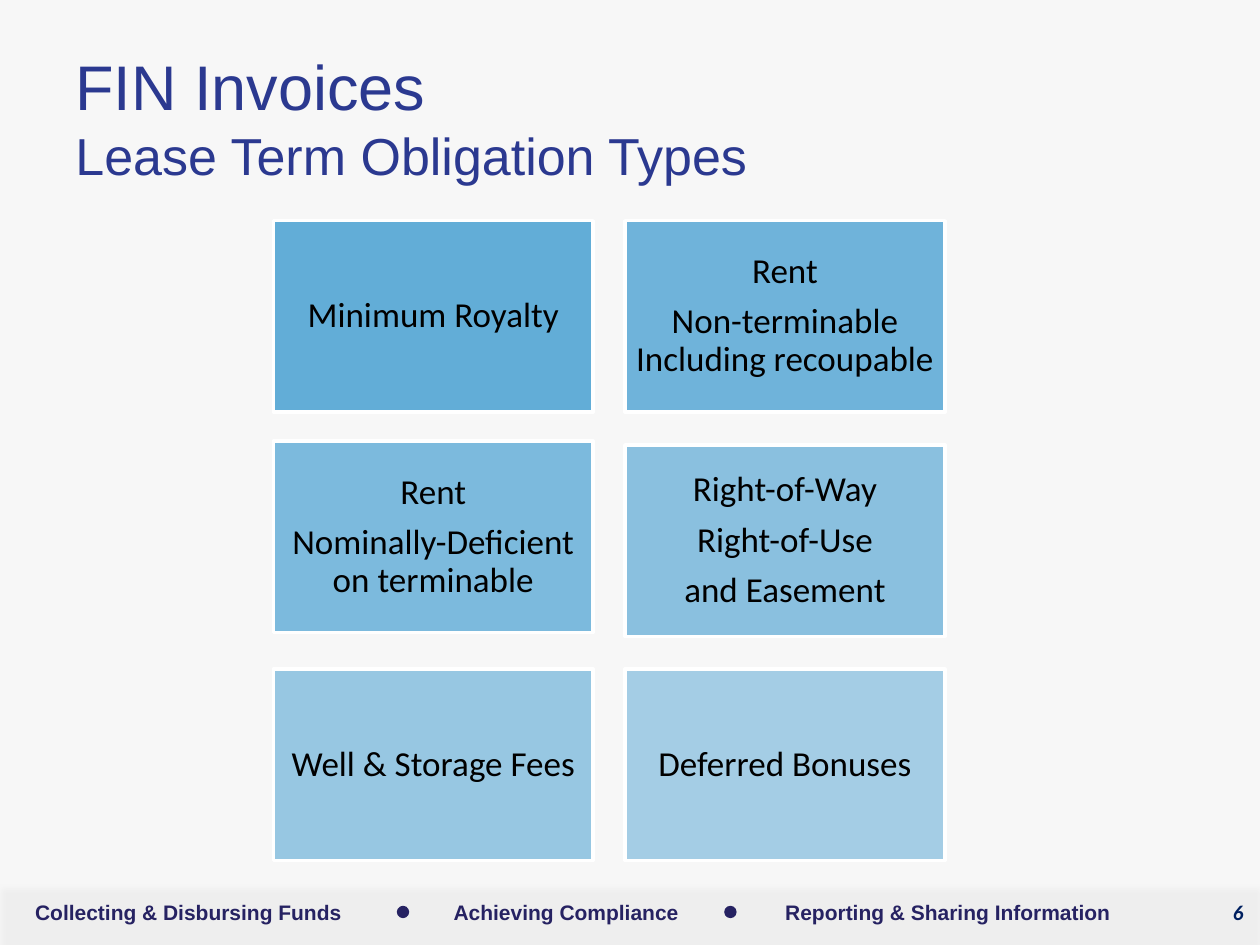
from lxml import etree
from pptx import Presentation
from pptx.dml.color import RGBColor
from pptx.enum.shapes import MSO_SHAPE as Shape
from pptx.enum.text import MSO_ANCHOR as Anchor, PP_ALIGN as Align
from pptx.oxml import parse_xml
from pptx.oxml.ns import nsdecls, qn
from pptx.util import Cm, Pt

TITLE = {"name": "Arial", "size": Pt(36)}
SUBTITLE = {"name": "Arial", "size": Pt(29.7)}
CARD = {"name": "Calibri", "size": Pt(20)}
FOOTER = {"name": "Arial", "size": Pt(12), "bold": True}
NUMBER = {"name": "Calibri", "size": Pt(12), "bold": True, "italic": True}


def color(value):
    return RGBColor.from_string(value)


def style(font, formats, value):
    for key, setting in formats.items():
        setattr(font, key, setting)
    font.color.rgb = color(value)


def add_block(slide, kind, box, fill, opacity=100):
    block = slide.shapes.add_shape(kind, *map(Cm, box))
    block.shadow.inherit = False
    block.fill.solid()
    block.fill.fore_color.rgb = color(fill)
    block.line.fill.background()
    if opacity < 100:
        tint = block.fill._xPr.find(".//" + qn("a:srgbClr"))
        etree.SubElement(tint, qn("a:alpha")).set("val", str(opacity * 1000))
    return block


def add_label(slide, box, text, formats, value, align, anchor):
    frame = slide.shapes.add_textbox(*map(Cm, box)).text_frame
    frame.word_wrap = True
    frame.vertical_anchor = anchor
    line = frame.paragraphs[0]
    line.alignment = align
    run = line.add_run()
    run.text = text
    style(run.font, formats, value)
    return line


def add_title(slide, box, heading, subheading):
    line = add_label(slide, box, heading, TITLE, "2B3990", Align.LEFT, Anchor.MIDDLE)
    line.add_line_break()
    run = line.add_run()
    run.text = subheading
    style(run.font, SUBTITLE, "2B3990")


def add_card(slide, box, lines, opacity):
    card = add_block(slide, Shape.RECTANGLE, box, "52A5D4", opacity)
    card.line.color.rgb = color("FFFFFF")
    card.line.width = Pt(2)
    frame = card.text_frame
    frame.word_wrap = True
    frame.vertical_anchor = Anchor.MIDDLE
    for side in ("left", "right", "top", "bottom"):
        setattr(frame, f"margin_{side}", Cm(0.2))
    frame.text = "\n".join(lines)
    for line in frame.paragraphs:
        line.alignment = Align.CENTER
        line.line_spacing = 0.9
        line.space_after = Pt(7)
        style(line.runs[0].font, CARD, "000000")


def add_obligations(slide, box, rows):
    left, top, width, height = box
    card_width, card_height = 6.45, 3.86
    column_step = width - card_width
    row_step = (height - card_height) / (len(rows) - 1)
    nudges = {(1, 0): -0.08}
    opacity = 90
    for r, row in enumerate(rows):
        for c, lines in enumerate(row):
            y = top + r * row_step + nudges.get((r, c), 0)
            add_card(slide, (left + c * column_step, y, card_width, card_height),
                     lines, opacity)
            opacity -= 8


def add_footer(slide, box, sections, number):
    left, top, width, height = box
    band = add_block(slide, Shape.RECTANGLE, box, "FFFFFF", 10)
    effects = band._element.spPr.find(qn("a:effectLst"))
    effects.append(parse_xml(
        f'<a:outerShdw {nsdecls("a")} blurRad="50800" dist="38100" dir="5400000" '
        'rotWithShape="0"><a:srgbClr val="000000"><a:alpha val="40000"/>'
        '</a:srgbClr></a:outerShdw>'))
    for text, x, section_width in sections:
        add_label(slide, (left + x, top + 0.23, section_width, 0.77), text,
                  FOOTER, "262262", Align.CENTER, Anchor.MIDDLE)
    for x in (8, 14.6):
        add_block(slide, Shape.OVAL, (left + x, top + 0.48, 0.25, 0.25), "262262")
    add_label(slide, (left + width - 1.4, top + 0.23, 1.32, 1.02), number,
              NUMBER, "002060", Align.RIGHT, Anchor.TOP)


def main():
    deck = Presentation()
    deck.slide_width, deck.slide_height = Cm(25.4), Cm(19.05)
    slide = deck.slides.add_slide(deck.slide_layouts[6])
    slide.background.fill.solid()
    slide.background.fill.fore_color.rgb = color("F7F7F7")
    add_footer(slide, (0, 17.78, 25.4, 1.27), [
        ("Collecting & Disbursing Funds", 0.18, 7.24),
        ("Achieving Compliance", 8.81, 5.21),
        ("Reporting & Sharing Information", 15.44, 7.34),
    ], "6")
    add_title(slide, (1.27, 0.76, 19.48, 3.18),
              "FIN Invoices", "Lease Term Obligation Types")
    add_obligations(slide, (5.51, 4.45, 13.54, 12.9), [
        (["Minimum Royalty"],
         ["Rent", "Non-terminable Including recoupable"]),
        (["Rent", "Nominally-Deficient on terminable"],
         ["Right-of-Way", "Right-of-Use", "and Easement"]),
        (["Well & Storage Fees"], ["Deferred Bonuses"]),
    ])
    deck.save("out.pptx")


if __name__ == "__main__":
    main()
